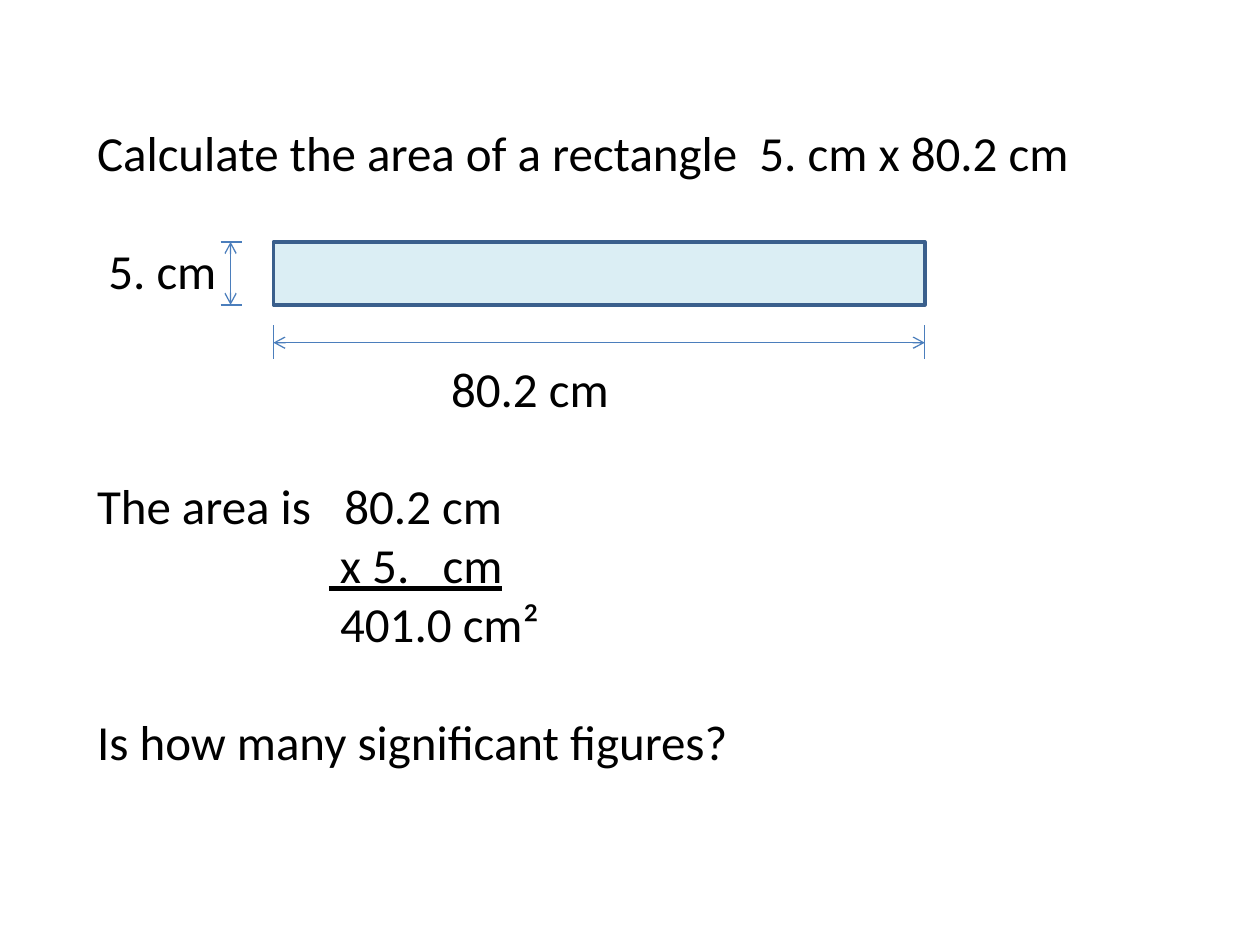
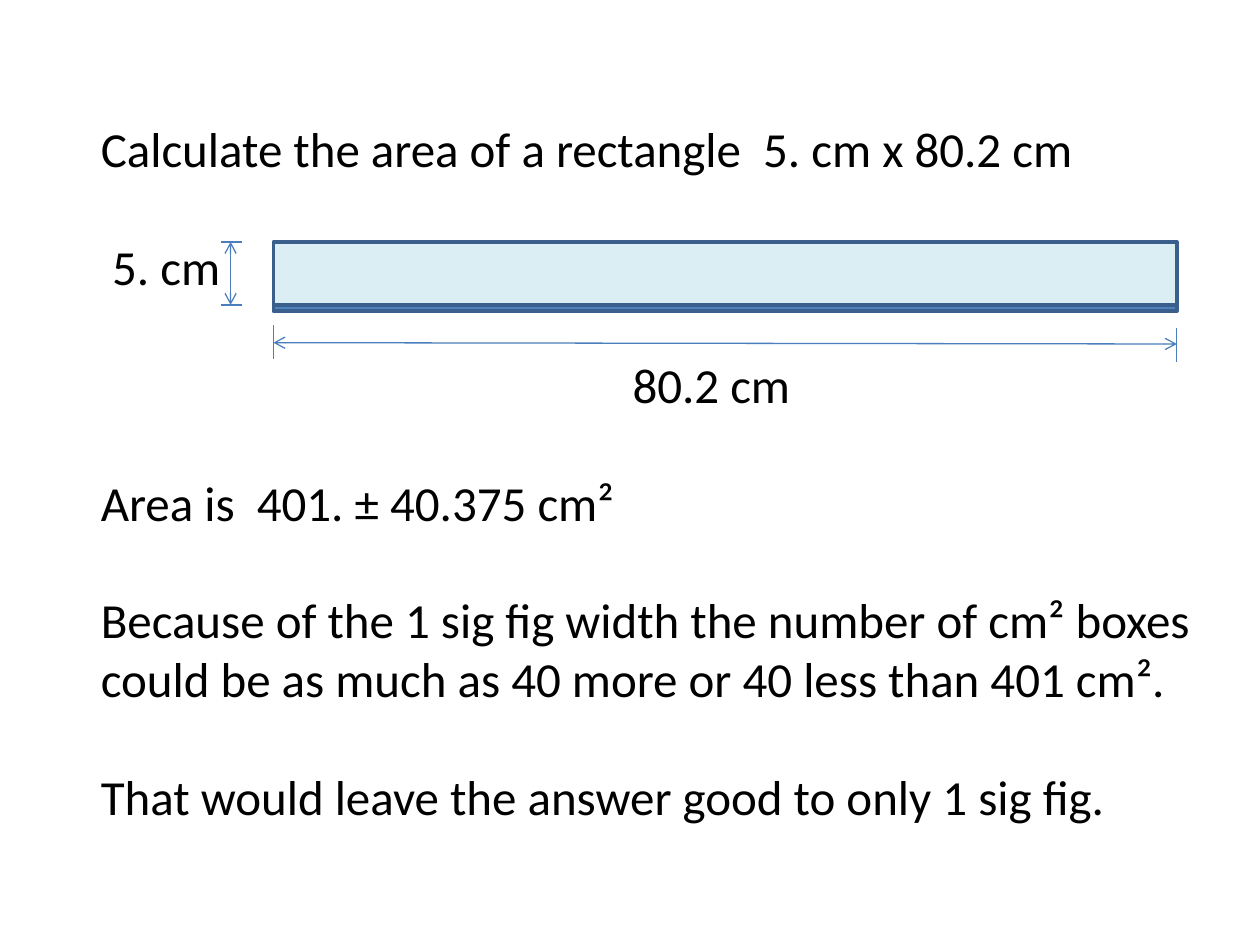
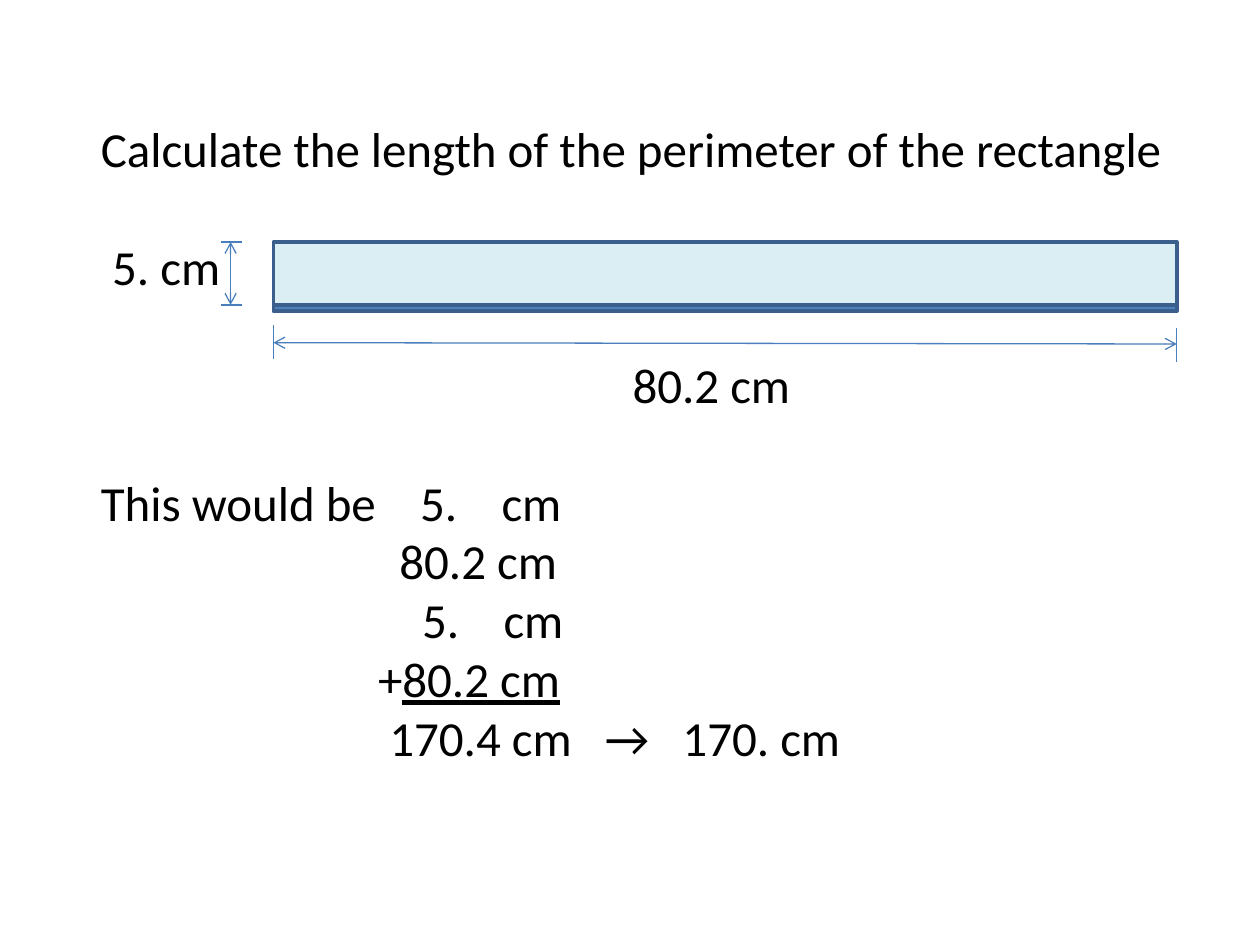
from dataclasses import dataclass

from lxml.etree import SubElement
from pptx import Presentation
from pptx.dml.color import RGBColor
from pptx.enum.shapes import MSO_CONNECTOR as Connector, MSO_SHAPE as Preset
from pptx.enum.text import MSO_ANCHOR as Anchor, MSO_AUTO_SIZE as AutoSize, PP_ALIGN as Align
from pptx.oxml.ns import qn
from pptx.util import Inches, Pt


@dataclass(frozen=True)
class Theme:
    font: str = "Calibri"
    size: float = 28
    line_height: float = 33.7  # points
    text: str = "000000"
    paper: str = "FFFFFF"
    bar: str = "DBEEF4"
    strip: str = "4F81BD"
    border: str = "3A5F8C"
    dimension: str = "4B7EBC"
    border_width: float = 2
    dimension_width: float = 0.75


THEME = Theme()

# Content: rows are (text, indent in inches, blank lines above).
# Text after "|" is underlined.
AREA_TITLE = "Calculate the area of a rectangle  5. cm x 80.2 cm"
HEIGHT_ROW = ("5. cm", 0.09, 0)

SLIDES = [
    dict(
        title=AREA_TITLE, text_at=(0.67, 0.92), text_width=8, bar_width=5.17, strip=False,
        rows=[
            HEIGHT_ROW,
            ("80.2 cm", 2.81, 1),
            ("The area is   80.2 cm", 0, 1),
            ("| x 5.   cm", 1.84, 0),
            ("401.0 cm²", 1.93, 0),
            ("Is how many significant figures?", 0, 1),
        ],
    ),
    dict(
        title=AREA_TITLE, text_at=(0.7, 0.89), text_width=8.92, bar_width=7.17, strip=True,
        rows=[
            HEIGHT_ROW,
            ("80.2 cm", 4.22, 1),
            ("Area is  401. ± 40.375 cm²", 0, 1),
            ("Because of the 1 sig fig width the number of cm² boxes", 0, 1),
            ("could be as much as 40 more or 40 less than 401 cm².", 0, 0),
            ("That would leave the answer good to only 1 sig fig.", 0, 1),
        ],
    ),
    dict(
        title="Calculate the length of the perimeter of the rectangle",
        text_at=(0.7, 0.89), text_width=8.92, bar_width=7.17, strip=True,
        rows=[
            HEIGHT_ROW,
            ("80.2 cm", 4.22, 1),
            ("This would be    5.    cm", 0, 1),
            ("80.2 cm", 2.37, 0),
            ("5.    cm", 2.55, 0),
            ("+|80.2 cm", 2.2, 0),
            ("170.4 cm   →   170. cm", 2.29, 0),
        ],
    ),
]

# Drawing grid, in inches
BAR_LEFT, BAR_TOP, BAR_HEIGHT = 2.17, 1.92, 0.5
STRIP_HEIGHT = 0.05
SIDE_TICK_LEFT, SIDE_TICK_RIGHT, SIDE_ARROW = 1.75, 1.92, 1.83
TICK_TOP, TICK_BOTTOM, LENGTH_ARROW = 2.58, 2.85, 2.72
INSET_X, INSET_Y = 0.1, 0.05


def color(code):
    return RGBColor.from_string(code)


def write(para, text, indent=0, space_before=0):
    """Write one left-aligned, indented row; text after "|" is underlined."""
    para.alignment = Align.LEFT
    para.space_before = Pt(space_before)
    para.space_after = Pt(0)
    para.line_spacing = 1.0
    props = para._p.get_or_add_pPr()
    props.set("marL", str(Inches(indent)))
    props.set("indent", "0")
    SubElement(props, qn("a:buNone"))
    plain, _, underlined = text.partition("|")
    for part, is_underlined in ((plain, False), (underlined, True)):
        if part:
            span = para.add_run()
            span.text = part
            span.font.name = THEME.font
            span.font.size = Pt(THEME.size)
            span.font.color.rgb = color(THEME.text)
            span.font.underline = is_underlined


def place_text(box, left, top, width, lines):
    """Move a placeholder and size it for a number of text lines."""
    box.left, box.top, box.width = Inches(left), Inches(top), Inches(width)
    box.height = Pt(lines * THEME.line_height) + Inches(2 * INSET_Y)
    frame = box.text_frame
    frame.word_wrap = True
    frame.auto_size = AutoSize.NONE
    frame.vertical_anchor = Anchor.TOP
    frame.margin_left = frame.margin_right = Inches(INSET_X)
    frame.margin_top = frame.margin_bottom = Inches(INSET_Y)
    return frame


def add_text(page, item):
    left, top = item["text_at"]
    width, rows = item["text_width"], item["rows"]
    title = place_text(page.shapes.title, left, top, width, 1)
    write(title.paragraphs[0], item["title"])

    # The body starts two lines below the title
    body_top = top + 2 * THEME.line_height / 72
    lines = sum(1 + blank for _, _, blank in rows)
    body = place_text(page.placeholders[1], left, body_top, width, lines)
    for index, (text, indent, blank) in enumerate(rows):
        para = body.add_paragraph() if index else body.paragraphs[0]
        write(para, text, indent=indent, space_before=blank * THEME.line_height)


def add_bar(page, top, width, height, fill):
    bar = page.shapes.add_shape(
        Preset.RECTANGLE, Inches(BAR_LEFT), Inches(top), Inches(width), Inches(height))
    bar.shadow.inherit = False
    bar.fill.solid()
    bar.fill.fore_color.rgb = color(fill)
    bar.line.color.rgb = color(THEME.border)
    bar.line.width = Pt(THEME.border_width)


def add_line(page, start, end, arrows=False):
    line = page.shapes.add_connector(
        Connector.STRAIGHT, *(Inches(value) for value in (*start, *end)))
    line.line.color.rgb = color(THEME.dimension)
    line.line.width = Pt(THEME.dimension_width)
    if arrows:
        for tag in ("a:headEnd", "a:tailEnd"):
            SubElement(line.line._get_or_add_ln(), qn(tag), type="arrow")
    SubElement(line._element.spPr, qn("a:effectLst"))


def add_drawing(page, bar_width, strip):
    bar_bottom = BAR_TOP + BAR_HEIGHT
    bar_right = BAR_LEFT + bar_width
    drop = 0.02 if strip else 0  # the right tick sits lower beside the strip
    add_bar(page, BAR_TOP, bar_width, BAR_HEIGHT, THEME.bar)

    # Height dimension
    for y in (BAR_TOP, bar_bottom):
        add_line(page, (SIDE_TICK_LEFT, y), (SIDE_TICK_RIGHT, y))
    add_line(page, (SIDE_ARROW, BAR_TOP), (SIDE_ARROW, bar_bottom), arrows=True)

    # Length dimension
    for x, shift in ((BAR_LEFT, 0), (bar_right, drop)):
        add_line(page, (x, TICK_TOP + shift), (x, TICK_BOTTOM + shift))
    add_line(page, (BAR_LEFT, LENGTH_ARROW), (bar_right, LENGTH_ARROW + drop / 2), arrows=True)

    # Uncertainty strip
    if strip:
        add_bar(page, bar_bottom, bar_width, STRIP_HEIGHT, THEME.strip)


def main():
    deck = Presentation()
    deck.slide_width, deck.slide_height = Inches(10), Inches(7.5)
    for item in SLIDES:
        page = deck.slides.add_slide(deck.slide_layouts[1])
        page.background.fill.solid()
        page.background.fill.fore_color.rgb = color(THEME.paper)
        add_text(page, item)
        add_drawing(page, item["bar_width"], item["strip"])
    deck.save("out.pptx")


if __name__ == "__main__":
    main()
